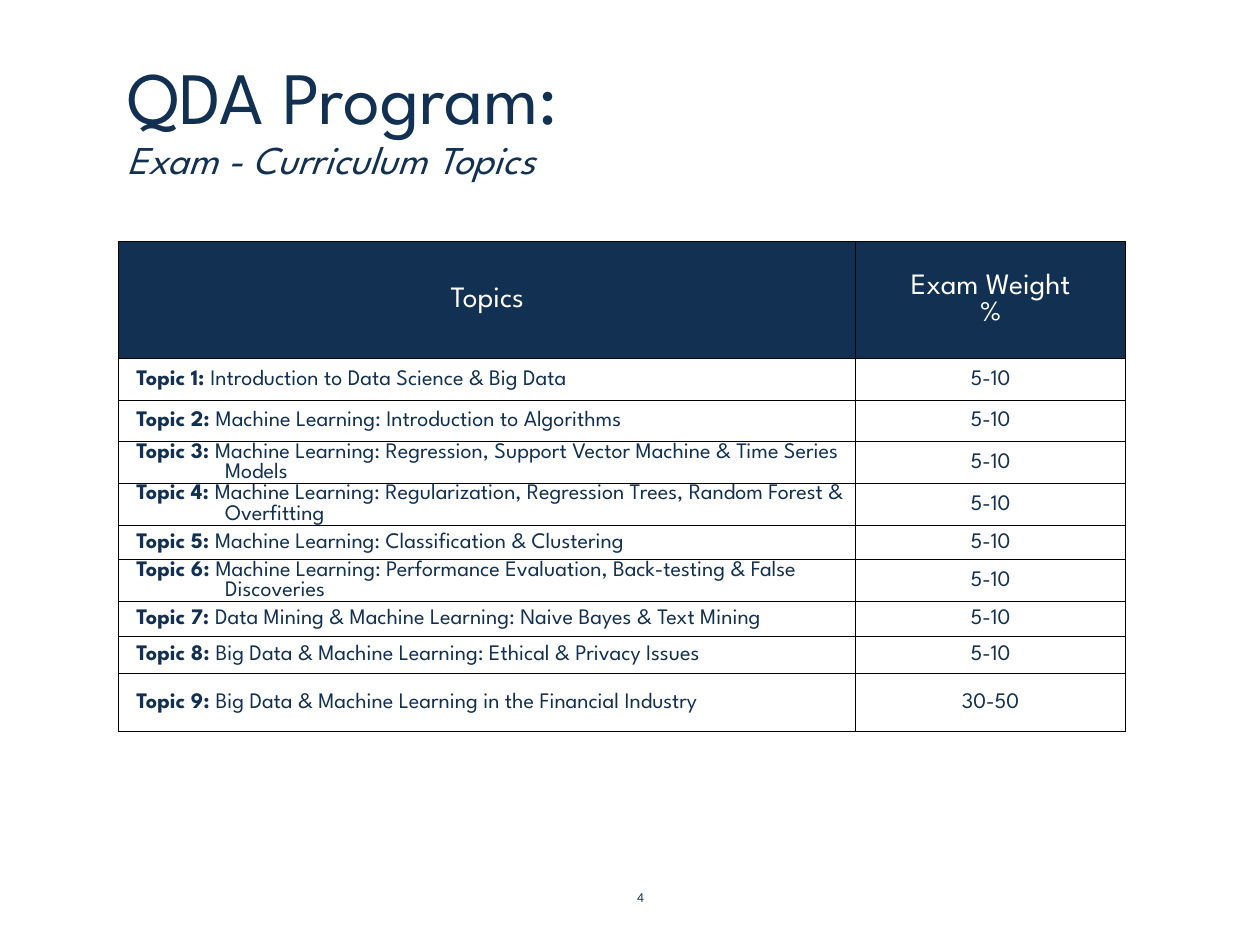
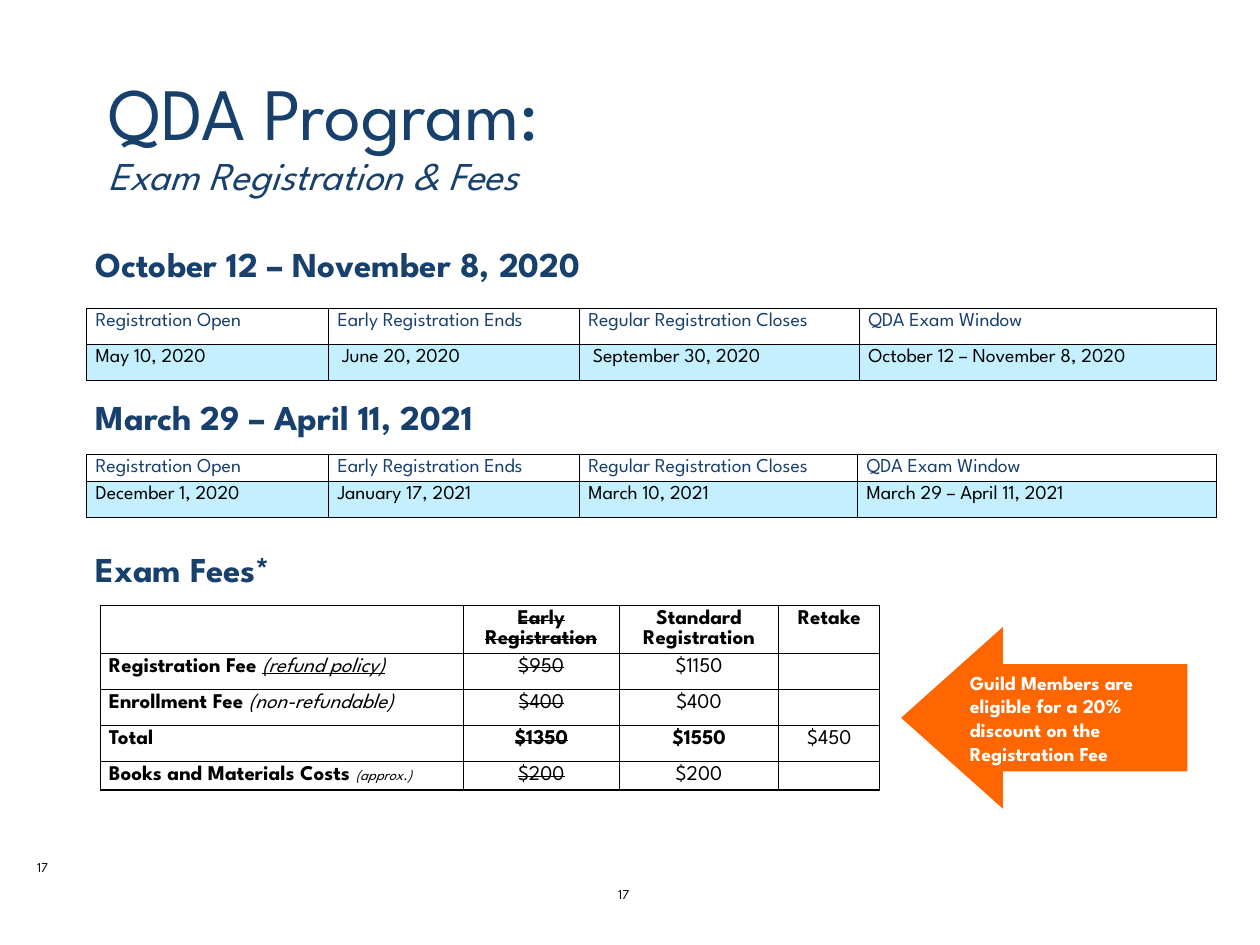
from dataclasses import dataclass

from lxml import etree
from pptx import Presentation
from pptx.dml.color import RGBColor
from pptx.enum import shapes, text
from pptx.oxml import ns
from pptx.util import Inches, Pt


@dataclass(frozen=True)
class Theme:
    font: str = "League Spartan"
    number_font: str = "Calibri"
    navy: str = "113052"
    blue: str = "17406D"
    sky: str = "C4EFFF"
    orange: str = "FF6600"
    black: str = "000000"
    white: str = "FFFFFF"
    title: float = 60
    subtitle: float = 32
    heading: float = 28.4
    column_head: float = 24
    topic: float = 18
    fee: float = 17
    date: float = 16
    small: float = 12
    number: float = 11


THEME = Theme()
PROGRAM = "QDA"
CENTER = text.PP_ALIGN.CENTER
LEFT = text.PP_ALIGN.LEFT
MIDDLE = text.MSO_ANCHOR.MIDDLE
TOP = text.MSO_ANCHOR.TOP


def rgb(color):
    return RGBColor.from_string(color)


def style(font, size, color, bold=False, face=THEME.font):
    font.name, font.size, font.bold = face, Pt(size), bold
    font.color.rgb = rgb(color)


def add_span(para, words, size=None, **flags):
    """Append a run; flags are font attributes such as bold or italic."""
    span = para.add_run()
    span.text = words
    if size:
        span.font.size = Pt(size)
    for name, value in flags.items():
        setattr(span.font, name, value)


def strike(para):
    for span in para.runs:
        span.font._element.set("strike", "sngStrike")


def size_empty(para, size):
    """Keep an empty paragraph from growing its table row."""
    end = etree.SubElement(para._p, ns.qn("a:endParaRPr"), sz=str(size * 100))
    etree.SubElement(end, ns.qn("a:latin"), typeface=THEME.font)


def set_indent(para, margin, first=0):
    props = para._p.get_or_add_pPr()
    props.set("marL", str(Inches(margin)))
    props.set("indent", str(Inches(first)))
    return props


def add_title(page, box, subtitle, color):
    title = page.shapes.title
    title.left, title.top, title.width, title.height = map(Inches, box)
    frame = title.text_frame
    frame.word_wrap, frame.vertical_anchor = True, MIDDLE
    frame.auto_size = text.MSO_AUTO_SIZE.NONE
    para = frame.paragraphs[0]
    para.alignment, para.line_spacing = LEFT, 0.9
    style(para.font, THEME.title, color)
    add_span(para, f"{PROGRAM} Program:")
    para.add_line_break()
    add_span(para, subtitle, THEME.subtitle, italic=True)


def add_page_number(page, box, number, color, face=THEME.font, align=CENTER):
    frame = page.shapes.add_textbox(*map(Inches, box)).text_frame
    frame.word_wrap = True
    para = frame.paragraphs[0]
    para.text, para.alignment = number, align
    style(para.font, THEME.number, color, face=face)


def add_borders(cell):
    props = cell._tc.get_or_add_tcPr()
    for place, side in enumerate(("lnL", "lnR", "lnT", "lnB")):
        line = etree.Element(ns.qn(f"a:{side}"), w=str(Pt(1)))
        fill = etree.SubElement(line, ns.qn("a:solidFill"))
        etree.SubElement(fill, ns.qn("a:srgbClr"), val=THEME.black)
        props.insert(place, line)


def add_grid(page, left, top, widths, heights):
    """Add a bordered table without fills and return it."""
    table = page.shapes.add_table(
        len(heights), len(widths), Inches(left), Inches(top),
        Inches(sum(widths)), Inches(sum(heights))).table
    table.first_row = table.horz_banding = False
    for column, width in zip(table.columns, widths):
        column.width = Inches(width)
    for row, height in zip(table.rows, heights):
        row.height = Inches(height)
    for cell in table.iter_cells():
        cell.fill.background()
        add_borders(cell)
    return table


def fill_cell(cell, color):
    cell.fill.solid()
    cell.fill.fore_color.rgb = rgb(color)


def add_topics(page, left, top):
    topics = [
        "Introduction to Data Science & Big Data",
        "Machine Learning: Introduction to Algorithms",
        "Machine Learning: Regression, Support Vector Machine & Time Series Models",
        "Machine Learning: Regularization, Regression Trees, Random Forest & Overfitting",
        "Machine Learning: Classification & Clustering",
        "Machine Learning: Performance Evaluation, Back-testing & False Discoveries",
        "Data Mining & Machine Learning: Naive Bayes & Text Mining",
        "Big Data & Machine Learning: Ethical & Privacy Issues",
        "Big Data & Machine Learning in the Financial Industry",
    ]
    heights = [1.32, 0.47, 0.47, 0.45, 0.41, 0.39, 0.45, 0.4, 0.41, 0.66]
    table = add_grid(page, left, top, [8.32, 3.04], heights)
    for cell in table.iter_cells():
        cell.vertical_anchor = MIDDLE
        cell.margin_left = cell.margin_right = cell.margin_top = Inches(0.01)
        cell.margin_bottom = 0
    for column, label in enumerate(("Topics", "Exam Weight\n%")):
        cell = table.cell(0, column)
        fill_cell(cell, THEME.navy)
        cell.text_frame.text = label
        for para in cell.text_frame.paragraphs:
            para.alignment = CENTER
            style(para.font, THEME.column_head, THEME.white)
    for number, topic in enumerate(topics, 1):
        para = table.cell(number, 0).text_frame.paragraphs[0]
        set_indent(para, 1.19, -1)
        style(para.font, THEME.topic, THEME.navy)
        add_span(para, f"Topic {number}: ", bold=True)
        add_span(para, topic)
        weight = table.cell(number, 1).text_frame.paragraphs[0]
        weight.text = "30-50" if number == len(topics) else "5-10"
        weight.alignment = CENTER
        style(weight.font, THEME.topic, THEME.navy)


def add_headings(page, box, headings):
    body = page.placeholders[1]
    body.left, body.top, body.width, body.height = map(Inches, box)
    frame = body.text_frame
    frame.word_wrap, frame.vertical_anchor = True, TOP
    frame.auto_size = text.MSO_AUTO_SIZE.NONE
    frame.text = "\n".join(headings)
    for place, para in enumerate(frame.paragraphs):
        etree.SubElement(set_indent(para, 0), ns.qn("a:buNone"))
        para.line_spacing = 0.9
        para.space_before = Pt(93.6 if place else 0)
        style(para.font, THEME.heading, THEME.blue, bold=True)


def add_dates(page, left, top, widths, heights, dates, inset_columns=()):
    labels = ["Registration Open", "Early Registration Ends",
              "Regular Registration Closes", f"{PROGRAM} Exam Window"]
    table = add_grid(page, left, top, widths, heights)
    for row, (entries, color) in enumerate(
            [(labels, THEME.blue), (dates, THEME.black)]):
        for column, entry in enumerate(entries):
            cell = table.cell(row, column)
            para = cell.text_frame.paragraphs[0]
            para.text = entry
            style(para.font, THEME.date, color)
            if row:
                fill_cell(cell, THEME.sky)
                if column in inset_columns:
                    cell.margin_left = Inches(0.15)


def add_fees(page, left, top):
    rows = [
        ("", "", "Early Registration", "Standard Registration", "Retake"),
        ("Registration Fee ", "(refund policy)", "$950", "$1150", ""),
        ("Enrollment Fee ", "(non-refundable)", "$400", "$400", ""),
        ("Total", "", "$1350", "$1550", "$450"),
        ("Books and Materials Costs ", "(approx.)", "$200", "$200", ""),
    ]
    table = add_grid(page, left, top, [4.1, 1.76, 1.8, 1.14],
                     [0.41, 0.41, 0.41, 0.41, 0.27])
    for row, (name, note, *fees) in enumerate(rows):
        para = table.cell(row, 0).text_frame.paragraphs[0]
        style(para.font, THEME.fee, THEME.black)
        if name:
            add_span(para, name, bold=True)
        if note:
            add_span(para, note, THEME.small if note == "(approx.)" else None,
                     italic=True, underline=note == "(refund policy)")
        for column, fee in enumerate(fees, 1):
            para = table.cell(row, column).text_frame.paragraphs[0]
            para.alignment = CENTER
            if not fee:
                size_empty(para, THEME.fee)
                continue
            bold = row == 0 or (name == "Total" and column < 3)
            style(para.font, THEME.fee, THEME.black, bold)
            add_span(para, fee)
            if column == 1:
                strike(para)


def add_discount_arrow(page, box):
    arrow = page.shapes.add_shape(shapes.MSO_SHAPE.LEFT_ARROW, *map(Inches, box))
    arrow.adjustments[0], arrow.adjustments[1] = 0.59, 0.56
    arrow.shadow.inherit = False
    arrow.fill.solid()
    arrow.fill.fore_color.rgb = rgb(THEME.orange)
    arrow.line.fill.background()
    frame = arrow.text_frame
    frame.word_wrap, frame.vertical_anchor = True, MIDDLE
    para = frame.paragraphs[0]
    para.text = "Guild Members are eligible for a 20% discount on the Registration Fee"
    para.alignment = LEFT
    style(para.font, THEME.date, THEME.white, bold=True)


def build_curriculum(deck):
    page = deck.slides.add_slide(deck.slide_layouts[5])
    add_title(page, (1.34, 0.35, 12.11, 2.06), "Exam - Curriculum Topics", THEME.navy)
    add_topics(page, 1.34, 2.73)
    add_page_number(page, (5.73, 9.99, 3, 0.4), "4", THEME.navy, THEME.number_font)


def build_registration(deck):
    page = deck.slides.add_slide(deck.slide_layouts[1])
    add_title(page, (1.13, 0.53, 11.88, 2.06), "Exam Registration & Fees", THEME.blue)
    add_headings(page, (0.98, 2.74, 12.27, 6.77),
                 ["October 12 – November 8, 2020", "March 29 – April 11, 2021",
                  "Exam Fees*"])
    add_dates(page, 0.98, 3.48, [2.73, 2.83, 3.16, 4.03], [0.41, 0.41],
              ["May 10, 2020", "June 20, 2020", "September 30, 2020",
               "October 12 – November 8, 2020"], inset_columns=(1, 2))
    add_dates(page, 0.98, 5.13, [2.73, 2.83, 3.14, 4.05], [0.25, 0.41],
              ["December 1, 2020", "January 17, 2021", "March 10, 2021",
               "March 29 – April 11, 2021"])
    add_fees(page, 1.13, 6.84)
    add_discount_arrow(page, (10.17, 7.08, 3.23, 2.05))
    add_page_number(page, (0.32, 9.65, 1.07, 0.56), "17", THEME.black, align=LEFT)
    add_page_number(page, (5.54, 9.95, 3, 0.4), "17", THEME.black)


def main():
    deck = Presentation()
    deck.slide_width, deck.slide_height = Inches(14.22), Inches(10.67)
    build_curriculum(deck)
    build_registration(deck)
    deck.save("out.pptx")


if __name__ == "__main__":
    main()
